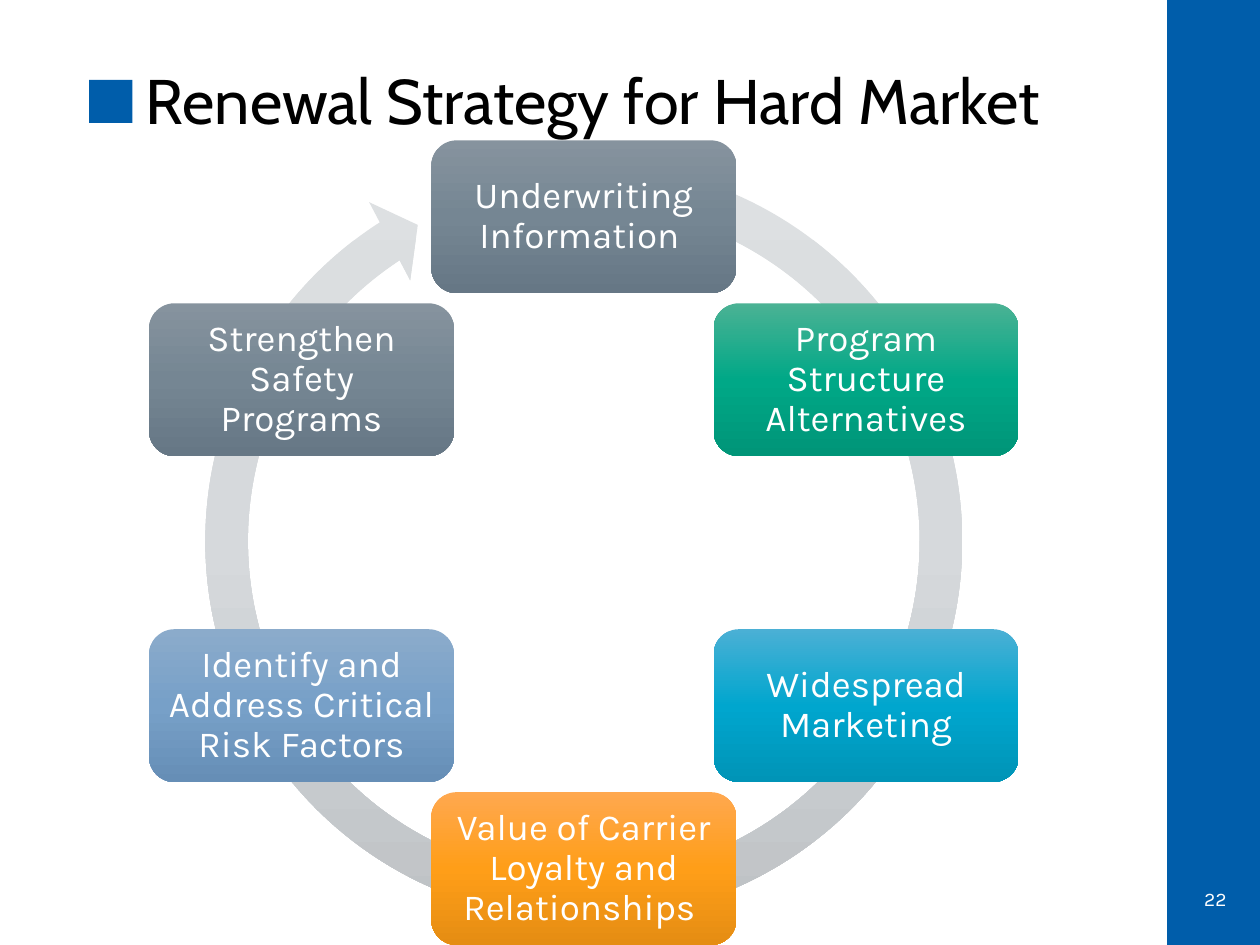
"""Build a slide with a six-step renewal cycle."""
from copy import deepcopy
from math import cos, radians, sin

from pptx import Presentation
from pptx.dml.color import RGBColor
from pptx.enum.shapes import MSO_SHAPE as Kind
from pptx.enum.text import MSO_ANCHOR as Anchor, MSO_AUTO_SIZE as Auto, PP_ALIGN as Align
from pptx.oxml.ns import qn
from pptx.util import Cm, Pt

TITLE = "Renewal Strategy for Hard Market"
NUMBER = "22"
STEPS = [
    ("Underwriting Information ", "gray"),
    ("Program Structure Alternatives", "green"),
    ("Widespread Marketing", "cyan"),
    ("Value of Carrier Loyalty and Relationships ", "orange"),
    ("Identify and Address Critical Risk Factors", "blue"),
    ("Strengthen Safety Programs", "gray"),
]
SOLID = {"brand": "005DAA", "black": "000000", "white": "FFFFFF"}
FADES = {
    "ring": ("DDE0E2", "D6D9DC", "BDC1C4"),
    "gray": ("86939E", "758693", "667785"),
    "green": ("4BB294", "00A887", "009578"),
    "cyan": ("4BB0D5", "00A6CE", "0094B7"),
    "orange": ("FFA84F", "FF9E18", "E58D13"),
    "blue": ("8BABCB", "77A0C8", "668EB6"),
}
MID_X, MID_Y, RADIUS = 11.77, 10.94, 6.57
BOX_W, BOX_H = 6.15, 3.08
RING, RING_Y = 16.18, 2.82
ARC = (5.3 / 100, 3.13, 142.25, 171.29, 5.5 / 100)


def color(name):
    return RGBColor.from_string(SOLID[name])


def place(shape, *box):
    shape.left, shape.top, shape.width, shape.height = map(Cm, box)


def add_form(slide, kind, *box):
    shape = slide.shapes.add_shape(kind, *map(Cm, box))
    shape.shadow.inherit = False
    shape.line.fill.background()
    return shape


def add_block(slide, *box):
    shape = add_form(slide, Kind.RECTANGLE, *box)
    shape.fill.solid()
    shape.fill.fore_color.rgb = color("brand")


def fade(shape, name):
    fill = shape.fill
    fill.gradient()
    fill.gradient_angle = 270
    stops = shape._element.spPr.find(".//" + qn("a:gsLst"))
    stops.append(deepcopy(stops[0]))
    for i, (stop, tone) in enumerate(zip(fill.gradient_stops, FADES[name])):
        stop.position = i / 2
        stop.color.rgb = RGBColor.from_string(tone)


def write(shape, text, face, size, tone, align, anchor, pad):
    frame = shape.text_frame
    frame.text = text
    frame.word_wrap = True
    frame.auto_size = Auto.NONE
    frame.vertical_anchor = anchor
    frame.margin_left = frame.margin_right = Cm(pad[0])
    frame.margin_top = frame.margin_bottom = Cm(pad[1])
    para = frame.paragraphs[0]
    para.alignment = align
    para.line_spacing = 0.9
    para.font.name = face
    para.font.size = Pt(size)
    para.font.color.rgb = color(tone)


def add_cycle(slide):
    ring = add_form(slide, Kind.CIRCULAR_ARROW, MID_X - RING / 2, RING_Y, RING, RING)
    for i, value in enumerate(ARC):
        ring.adjustments[i] = value
    fade(ring, "ring")
    for i, (text, name) in enumerate(STEPS):
        turn = radians(360 / len(STEPS) * i)
        left = MID_X + RADIUS * sin(turn) - BOX_W / 2
        top = MID_Y - RADIUS * cos(turn) - BOX_H / 2
        box = add_form(slide, Kind.ROUNDED_RECTANGLE, left, top, BOX_W, BOX_H)
        fade(box, name)
        write(box, text, "Karla", 21, "white", Align.CENTER, Anchor.MIDDLE, (0.22, 0.22))


def main():
    deck = Presentation()
    deck.slide_width, deck.slide_height = Cm(25.4), Cm(19.05)
    slide = deck.slides.add_slide(deck.slide_layouts[5])
    add_block(slide, 1.8, 1.61, 0.87, 0.87)
    add_block(slide, 23.53, 0, 1.87, 19.05)
    title = slide.shapes.title
    place(title, 2.69, 1.28, 20.09, 1.55)
    write(title, TITLE, "Cabin", 36, "black", Align.LEFT, Anchor.TOP, (0.25, 0.13))
    page = slide.shapes.add_textbox(Cm(24), Cm(17.82), Cm(1), Cm(0.66))
    write(page, NUMBER, "Karla", 11, "white", Align.CENTER, Anchor.MIDDLE, (0, 0))
    add_cycle(slide)
    deck.save("out.pptx")


if __name__ == "__main__":
    main()
